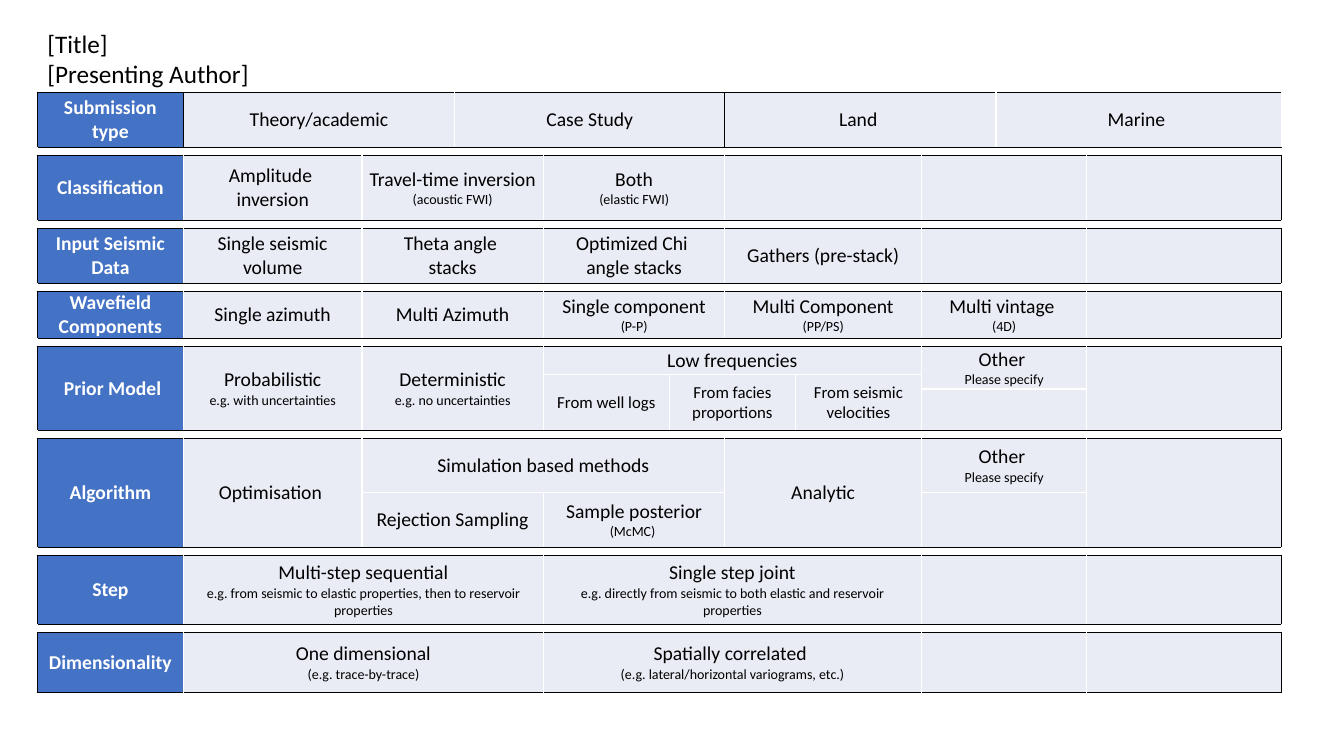
from dataclasses import dataclass
from itertools import product

from lxml.etree import SubElement
from pptx import Presentation
from pptx.dml.color import RGBColor
from pptx.enum.text import MSO_ANCHOR, MSO_AUTO_SIZE, PP_ALIGN
from pptx.oxml.ns import qn
from pptx.table import Table, _Cell
from pptx.text.text import _Paragraph
from pptx.util import Inches, Pt

COLOURS = {"label": "4472C4", "option": "E9EBF5", "white": "FFFFFF", "black": "000000"}
FONT = "Calibri"
LEFT, TOP = 0.37, 0.92
COLUMNS = [1.45, 1.77, 0.92, 0.88, 1.25, 0.55, 0.7, 1.25, 0.74, 0.9, 1.93]
GAP = 0.08
ROWS = [0.54, GAP, 0.65, GAP, 0.54, GAP, 0.47, GAP, 0.28, 0.14, 0.41, GAP,
        0.54, 0.54, GAP, 0.69, GAP, 0.59]
GAP_ROWS = [row for row, height in enumerate(ROWS) if height == GAP]


@dataclass(frozen=True)
class Entry:
    """A table cell: "|" parts paragraphs and "~" starts small print."""
    row: int
    column: int
    text: str = ""
    columns: int = 1
    rows: int = 1
    size: int = 14
    roomy: bool = False


ENTRIES = [
    # Submission type
    Entry(0, 0, "Submission\ntype"),
    Entry(0, 1, "Theory/academic", 2, roomy=True),
    Entry(0, 3, "Case Study", 3, roomy=True),
    Entry(0, 6, "Land ", 3),
    Entry(0, 9, "Marine ", 2),
    # Classification
    Entry(2, 0, "Classification"),
    Entry(2, 1, "Amplitude |inversion"),
    Entry(2, 2, "Travel-time inversion ~(acoustic FWI)", 2),
    Entry(2, 4, "Both|~(elastic FWI)", 2),
    Entry(2, 6, columns=2),
    # Input seismic data
    Entry(4, 0, "Input Seismic Data"),
    Entry(4, 1, "Single seismic volume"),
    Entry(4, 2, "Theta angle \nstacks", 2),
    Entry(4, 4, "Optimized Chi \nangle stacks", 2),
    Entry(4, 6, "Gathers (pre-stack)", 2),
    # Wavefield components
    Entry(6, 0, "Wavefield\nComponents"),
    Entry(6, 1, "Single azimuth"),
    Entry(6, 2, "Multi Azimuth", 2),
    Entry(6, 4, "Single component\n~(P-P)", 2),
    Entry(6, 6, "Multi Component\n~(PP/PS)", 2),
    Entry(6, 8, "Multi vintage |~(4D)", 2),
    Entry(6, 10),
    # Prior model
    Entry(8, 0, " Prior Model", rows=3),
    Entry(8, 1, "Probabilistic|~e.g. with uncertainties", rows=3),
    Entry(8, 2, "Deterministic|~e.g. no uncertainties", 2, 3),
    Entry(8, 4, "Low frequencies", 4),
    Entry(8, 8, "Other |~Please specify", 2, 2),
    Entry(8, 10, rows=3),
    Entry(9, 4, "From well logs", rows=2, size=12),
    Entry(9, 5, "From facies proportions", 2, 2, size=12),
    Entry(9, 7, "From seismic velocities", rows=2, size=12),
    Entry(10, 8, columns=2),
    # Algorithm
    Entry(12, 0, "Algorithm", rows=2),
    Entry(12, 1, "Optimisation ", rows=2),
    Entry(12, 2, "Simulation based methods", 4),
    Entry(12, 6, "Analytic", 2, 2),
    Entry(12, 8, "Other |~Please specify", 2),
    Entry(12, 10, rows=2),
    Entry(13, 2, "Rejection Sampling", 2),
    Entry(13, 4, "Sample posterior ~(McMC) ", 2),
    Entry(13, 8, columns=2),
    # Step
    Entry(15, 0, "Step"),
    Entry(15, 1, "Multi-step sequential|~e.g. from seismic to elastic properties, "
          "then to reservoir properties", 3, roomy=True),
    Entry(15, 4, "Single step joint|~e.g. directly from seismic to both elastic "
          "and reservoir properties", 4, roomy=True),
    # Dimensionality
    Entry(17, 0, "Dimensionality"),
    Entry(17, 1, "One dimensional\n~(e.g. trace-by-trace)", 3, roomy=True),
    Entry(17, 4, "Spatially correlated \n~(e.g. lateral/horizontal variograms, etc.)",
          4, roomy=True),
]
# Empty options at the right and the thin full-width gaps
ENTRIES += [Entry(row, 8, columns=2) for row in (2, 4, 15, 17)]
ENTRIES += [Entry(row, 10) for row in (2, 4, 15, 17)]
ENTRIES += [Entry(row, 0, columns=len(COLUMNS)) for row in GAP_ROWS]


def add_span(para: _Paragraph, text: str, *, size: int, colour: str = "black",
             bold: bool = False) -> None:
    for index, line in enumerate(text.split("\n")):
        if index:
            para.add_line_break()
        if line:
            span = para.add_run()
            span.text = line
            span.font.name, span.font.size, span.font.bold = FONT, Pt(size), bold
            span.font.color.rgb = RGBColor.from_string(COLOURS[colour])


def add_border(cell: _Cell, side: str, colour: str) -> None:
    line = SubElement(cell._tc.get_or_add_tcPr(), qn(f"a:ln{side}"), w=str(Pt(1)))
    fill = SubElement(line, qn("a:solidFill"))
    SubElement(fill, qn("a:srgbClr"), val=COLOURS[colour])


def edge_colours(entry: Entry) -> dict[str, str]:
    """Black round each band and between the submission groups, white inside."""
    right, bottom = entry.column + entry.columns, entry.row + entry.rows
    is_gap = entry.row in GAP_ROWS
    dark_columns = [0, len(COLUMNS)] + ([1, 6] if entry.row == 0 else [])
    dark = {
        "L": not is_gap and entry.column in dark_columns,
        "R": not is_gap and right in dark_columns,
        "T": is_gap or entry.row == 0 or entry.row - 1 in GAP_ROWS,
        "B": is_gap or bottom == len(ROWS) or bottom in GAP_ROWS,
    }
    return {side: "black" if is_dark else "white" for side, is_dark in dark.items()}


def draw_entry(table: Table, entry: Entry) -> None:
    last_row = entry.row + entry.rows - 1
    last_column = entry.column + entry.columns - 1
    is_gap = entry.row in GAP_ROWS
    is_label = entry.column == 0 and not is_gap
    fill = "white" if is_gap else "label" if is_label else "option"
    edges = edge_colours(entry)

    # Borders, fill and margins of every grid cell covered
    for row, column in product(range(entry.row, last_row + 1),
                               range(entry.column, last_column + 1)):
        cell = table.cell(row, column)
        outer = {"L": column == entry.column, "R": column == last_column,
                 "T": row == entry.row, "B": row == last_row}
        for side, is_outer in outer.items():
            if is_outer:
                add_border(cell, side, edges[side])
        cell.fill.solid()
        cell.fill.fore_color.rgb = RGBColor.from_string(COLOURS[fill])
        cell.margin_left = cell.margin_right = Inches(0.12 if entry.roomy else 0.06)
        cell.margin_top = cell.margin_bottom = Inches(0.06 if entry.roomy else 0)
        if not entry.text or (row, column) != (entry.row, entry.column):
            SubElement(cell.text_frame.paragraphs[0]._p, qn("a:endParaRPr"), sz="100")

    origin = table.cell(entry.row, entry.column)
    if entry.rows * entry.columns > 1:
        origin.merge(table.cell(last_row, last_column))
    if not entry.text:
        return

    # Wording
    origin.vertical_anchor = MSO_ANCHOR.MIDDLE
    frame = origin.text_frame
    for index, line in enumerate(entry.text.split("|")):
        para = frame.add_paragraph() if index else frame.paragraphs[0]
        para.alignment = PP_ALIGN.CENTER
        main, _, small = line.partition("~")
        add_span(para, main, size=entry.size, bold=is_label,
                 colour="white" if is_label else "black")
        add_span(para, small, size=10)


def main() -> None:
    deck = Presentation()
    deck.slide_width, deck.slide_height = Inches(13.33), Inches(7.5)
    page = deck.slides.add_slide(deck.slide_layouts[5])

    # Title and author
    title = page.shapes.title
    title.left, title.top = Inches(LEFT), Inches(0.23)
    title.width, title.height = Inches(2.22), Inches(0.71)
    frame = title.text_frame
    frame.word_wrap = False
    frame.auto_size = MSO_AUTO_SIZE.SHAPE_TO_FIT_TEXT
    frame.vertical_anchor = MSO_ANCHOR.TOP
    for index, line in enumerate(["[Title]", "[Presenting Author]"]):
        para = frame.add_paragraph() if index else frame.paragraphs[0]
        para.alignment, para.line_spacing = PP_ALIGN.LEFT, 1.0
        para.space_before = Pt(0)
        add_span(para, line, size=18)

    # Classification table
    table = page.shapes.add_table(len(ROWS), len(COLUMNS), Inches(LEFT), Inches(TOP),
                                  Inches(sum(COLUMNS)), Inches(sum(ROWS))).table
    table.first_row = table.horz_banding = False
    for column, width in zip(table.columns, COLUMNS):
        column.width = Inches(width)
    for row, height in zip(table.rows, ROWS):
        row.height = Inches(height)
    for entry in ENTRIES:
        draw_entry(table, entry)

    deck.save("out.pptx")


if __name__ == "__main__":
    main()
